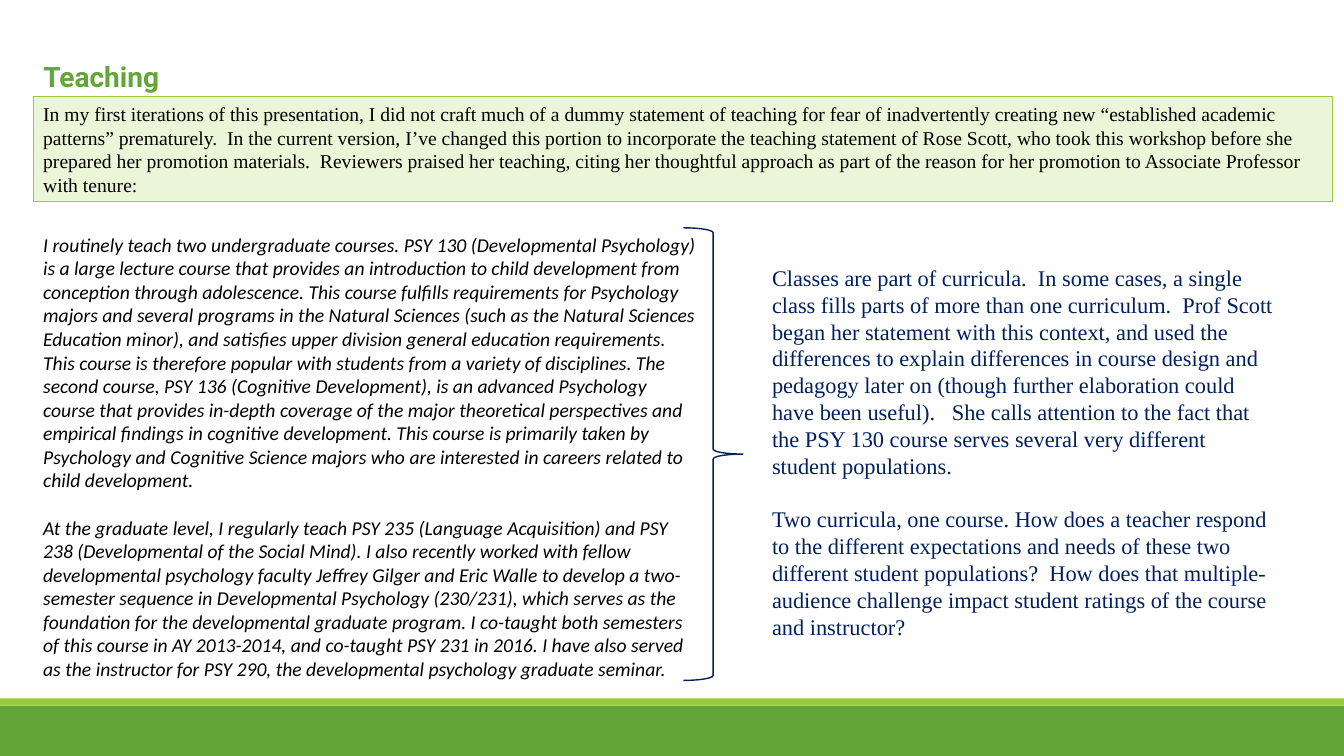
from pptx import Presentation
from pptx.dml.color import RGBColor
from pptx.enum.shapes import MSO_SHAPE
from pptx.enum.text import MSO_ANCHOR, PP_ALIGN
from pptx.util import Inches, Pt

RECTANGLE, BRACE = MSO_SHAPE.RECTANGLE, MSO_SHAPE.RIGHT_BRACE
TOP, MIDDLE, LEFT = MSO_ANCHOR.TOP, MSO_ANCHOR.MIDDLE, PP_ALIGN.LEFT
WIDTH, HEIGHT, MARGIN = 13.33, 7.5, 0.33
GREEN, LIME, PALE, NAVY, BLACK = "63A537", "99CB38", "EBF5D7", "002060", "000000"

INTRO = [[
    "In my first iterations of this presentation, I did not craft much of a dummy statement of teaching "
    "for fear of inadvertently creating new “established academic patterns” prematurely.  In the current "
    "version, I’ve changed this portion to incorporate the teaching statement of Rose Scott, who took this "
    "workshop before she prepared her promotion materials.  Reviewers praised her teaching, citing her "
    "thoughtful approach as part of the reason for her promotion to Associate Professor with tenure:",
]]
STATEMENT = [[
    "I routinely teach two undergraduate courses. PSY 130 (Developmental Psychology) is a large lecture "
    "course that provides an introduction to child development from conception through adolescence. This "
    "course fulfills requirements for Psychology majors and several programs in the Natural Sciences (such "
    "as the Natural Sciences Education minor), and satisfies upper division general education requirements. "
    "This course is therefore popular with students from a variety of disciplines. ",
    "The second course, PSY 136 (Cognitive Development), is an advanced Psychology course that provides "
    "in-depth coverage of the major theoretical perspectives and empirical findings in cognitive "
    "development. This course is primarily taken by Psychology and Cognitive Science majors who are "
    "interested in careers related to child development.",
], [
    "At the graduate level, I regularly teach PSY 235 (Language Acquisition) and PSY 238 (Developmental of "
    "the Social Mind). I also recently worked with fellow developmental psychology faculty Jeffrey Gilger "
    "and Eric Walle to develop a two-semester sequence in Developmental Psychology (230/231), which serves "
    "as the foundation for the developmental graduate program. I co-taught both semesters of this course in "
    "AY 2013-2014, and co-taught PSY 231 in 2016. I have also served as the instructor for PSY 290, the "
    "developmental psychology graduate seminar.",
]]
COMMENTARY = [[
    "Classes are part of curricula.  In some cases, a single class fills parts of more than one curriculum.  "
    "Prof Scott began her statement with this context, and used the differences to explain differences in "
    "course design and pedagogy later on (though further elaboration could have been useful).   She calls "
    "attention to the fact that the PSY 130 course serves several very different student populations.",
], [
    "Two curricula, one course. How does a teacher respond to the different expectations and needs of these "
    "two different student populations?  How does that multiple-audience challenge impact student ratings "
    "of the course and instructor?",
]]


def color(hex_code):
    """Turn a hex string into a colour."""
    return RGBColor.from_string(hex_code)


def write(frame, paragraphs, font, size, ink, bold=False, italic=False, gap=0, anchor=TOP):
    """Fill a text frame with evenly separated paragraphs, run by run."""
    frame.word_wrap = True
    frame.vertical_anchor = anchor
    for index, passages in enumerate(paragraphs):
        paragraph = frame.add_paragraph() if index else frame.paragraphs[0]
        paragraph.alignment = LEFT
        paragraph.space_before = Pt(gap if index else 0)
        for passage in passages:
            run = paragraph.add_run()
            run.text = passage
            run.font.name, run.font.size = font, Pt(size)
            run.font.bold, run.font.italic = bold, italic
            run.font.color.rgb = color(ink)


def outline(slide, kind, box, fill=None, line=None, weight=1):
    """Draw a flat preset shape in the given box."""
    shape = slide.shapes.add_shape(kind, *map(Inches, box))
    shape.shadow.inherit = False
    if fill:
        shape.fill.solid()
        shape.fill.fore_color.rgb = color(fill)
    else:
        shape.fill.background()
    if line:
        shape.line.color.rgb = color(line)
        shape.line.width = Pt(weight)
    else:
        shape.line.fill.background()
    return shape


def footer(slide, box):
    """Lay a thin lime stripe above a green band."""
    left, top, width, height = box
    stripe = 0.07
    outline(slide, RECTANGLE, (left, top + stripe, width, height - stripe), GREEN)
    outline(slide, RECTANGLE, (left, top, width, stripe), LIME)


def heading(slide, box):
    """Place and format the slide title."""
    title = slide.shapes.title
    title.left, title.top, title.width, title.height = map(Inches, box)
    write(title.text_frame, [["Teaching"]], "Roboto", 20, GREEN, bold=True)
    title.text_frame.paragraphs[0].line_spacing = 1.07


def introduction(slide, box):
    """Place the framed introduction."""
    panel = outline(slide, RECTANGLE, box, PALE, LIME, 0.75)
    write(panel.text_frame, INTRO, "Times New Roman", 14, BLACK, anchor=MIDDLE)


def discussion(slide, box):
    """Set the statement beside its commentary, joined by a brace."""
    left, top, width, height = box
    statement = slide.shapes.add_textbox(*map(Inches, (left, top, width * 0.54, height)))
    write(statement.text_frame, STATEMENT, "Calibri", 14, BLACK, italic=True, gap=17)
    commentary_box = (left + width * 0.583, top + 0.31, width * 0.417, height - 0.71)
    commentary = slide.shapes.add_textbox(*map(Inches, commentary_box))
    write(commentary.text_frame, COMMENTARY, "Times New Roman", 16, NAVY, gap=19)
    outline(slide, BRACE, (left + width * 0.52, top, 0.59, height - 0.09), line=NAVY)


def main():
    """Build and save the teaching slide."""
    deck = Presentation()
    deck.slide_width, deck.slide_height = Inches(WIDTH), Inches(HEIGHT)
    slide = deck.slides.add_slide(deck.slide_layouts[5])
    footer(slide, (0, 6.93, WIDTH, HEIGHT - 6.93))
    introduction(slide, (MARGIN, 0.96, 12.89, 1.04))
    discussion(slide, (MARGIN, 2.26, 12.4, 4.58))
    heading(slide, (MARGIN, 0.52, 6.67, 0.44))
    deck.save("out.pptx")


if __name__ == "__main__":
    main()
